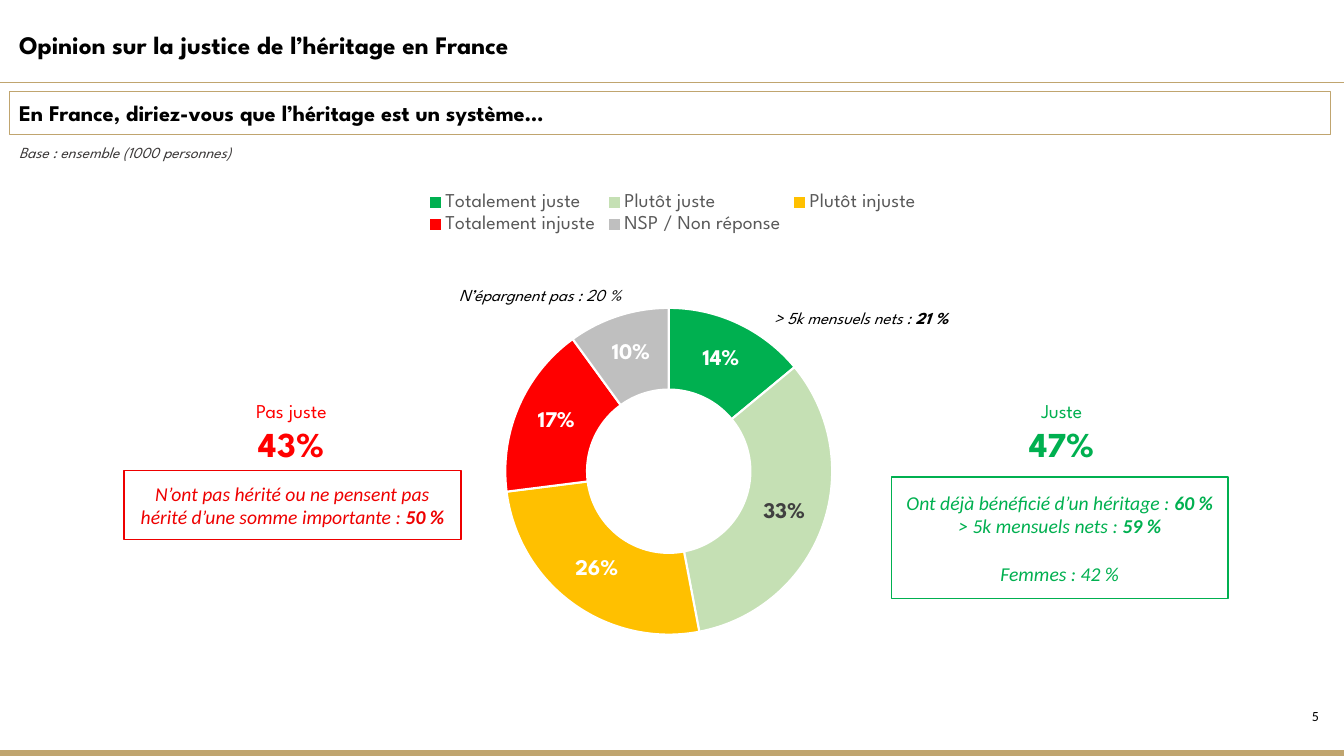
from lxml.etree import SubElement
from pptx import Presentation
from pptx.chart.data import CategoryChartData
from pptx.dml.color import RGBColor
from pptx.enum.chart import XL_CHART_TYPE, XL_LEGEND_POSITION
from pptx.enum.shapes import MSO_CONNECTOR, MSO_SHAPE
from pptx.enum.text import MSO_ANCHOR, PP_ALIGN
from pptx.oxml.ns import qn
from pptx.util import Inches, Pt

WIDTH, HEIGHT = Inches(13.33), Inches(7.5)
SPARTAN, CALIBRI = "League Spartan", "Calibri"
GOLD, GREEN, RED, BLACK = "C0A56F", "00B050", "FF0000", "000000"
WHITE, DARK = "FFFFFF", "404040"
LEFT, CENTER, RIGHT = PP_ALIGN.LEFT, PP_ALIGN.CENTER, PP_ALIGN.RIGHT
TOP, MIDDLE = MSO_ANCHOR.TOP, MSO_ANCHOR.MIDDLE
SLICES = [
    ("Totalement juste", 0.14, GREEN, WHITE),
    ("Plutôt juste", 0.33, "C5E0B4", DARK),
    ("Plutôt injuste", 0.26, "FFC000", WHITE),
    ("Totalement injuste", 0.17, RED, WHITE),
    ("NSP / Non réponse", 0.10, "BFBFBF", WHITE),
]


def rgb(code):
    return RGBColor.from_string(code)


def place(x, y, w, h):
    """Turn percent shares of the slide into lengths."""
    return (round(WIDTH * x / 100), round(HEIGHT * y / 100),
            round(WIDTH * w / 100), round(HEIGHT * h / 100))


def style(font, color, **values):
    for name, value in values.items():
        setattr(font, name, value)
    font.color.rgb = rgb(color)


def look(size, color=BLACK, name=SPARTAN, bold=False, italic=False):
    return dict(size=Pt(size), color=color, name=name, bold=bold, italic=italic)


def write(shape, lines, align=LEFT, anchor=TOP):
    """Fill a shape; each line is a list of (text, look) runs."""
    frame = shape.text_frame
    frame.word_wrap = True
    frame.vertical_anchor = anchor
    for i, runs in enumerate(lines):
        para = frame.paragraphs[0] if i == 0 else frame.add_paragraph()
        para.alignment = align
        for text, form in runs:
            run = para.add_run()
            run.text = text
            style(run.font, **form)
    return frame


def add_text(slide, area, lines, align=LEFT, anchor=TOP):
    return write(slide.shapes.add_textbox(*place(*area)), lines, align, anchor)


def add_box(slide, area, color, width, fill=None):
    box = slide.shapes.add_shape(MSO_SHAPE.RECTANGLE, *place(*area))
    box.shadow.inherit = False
    if fill:
        box.fill.solid()
        box.fill.fore_color.rgb = rgb(fill)
    else:
        box.fill.background()
    box.line.color.rgb = rgb(color)
    box.line.width = Pt(width)
    return box


def add_rule(slide, y):
    x, top, w, _ = place(0, y, 100, 0)
    rule = slide.shapes.add_connector(MSO_CONNECTOR.STRAIGHT, x, top, w, top)
    rule.line.color.rgb = rgb(GOLD)
    rule.line.width = Pt(0.5)
    SubElement(rule._element.spPr, qn("a:effectLst"))


def add_score(slide, x, label, score, color):
    add_text(slide, (x, 52.13, 23.86, 10.13),
             [[(label, look(14, color))], [(score, look(25, color, bold=True))]],
             CENTER)


def set_plot(chart, **shares):
    """Fix the inner plot area as shares of the chart."""
    area = chart._chartSpace.chart.plotArea
    for old in area.findall(qn("c:layout")):
        area.remove(old)
    layout = SubElement(area, qn("c:layout"))
    area.insert(0, layout)
    manual = SubElement(layout, qn("c:manualLayout"))
    modes = dict(layoutTarget="inner", xMode="edge", yMode="edge")
    for tag, value in {**modes, **shares}.items():
        SubElement(manual, qn("c:" + tag)).set("val", str(value))


def add_ring(slide, area):
    data = CategoryChartData(number_format="0%")
    data.categories = [name for name, *_ in SLICES]
    data.add_series("Series 1", [value for _, value, *_ in SLICES])
    chart = slide.shapes.add_chart(
        XL_CHART_TYPE.DOUGHNUT, *place(*area), data).chart
    style(chart.font, BLACK, size=Pt(10), name=CALIBRI)
    chart.has_title = False
    chart.has_legend = True
    chart.legend.position = XL_LEGEND_POSITION.TOP
    chart.legend.include_in_layout = False
    style(chart.legend.font, "595959", size=Pt(14), name=SPARTAN)
    plot = chart.plots[0]
    plot.vary_by_categories = True
    plot._element.find(qn("c:holeSize")).set("val", "61")
    plot.has_data_labels = True
    labels = plot.data_labels
    labels.show_value, labels.show_percentage = True, False
    labels.number_format, labels.number_format_is_linked = "0%", False
    for i, (_, _, color, ink) in enumerate(SLICES):
        point = plot.series[0].points[i]
        point.format.fill.solid()
        point.format.fill.fore_color.rgb = rgb(color)
        point.format.line.color.rgb = rgb(WHITE)
        point.format.line.width = Pt(1.5)
        style(point.data_label.font, **look(16, ink, bold=True))
    set_plot(chart, x=0.28, y=0.19, w=0.43, h=0.79)


def main():
    deck = Presentation()
    deck.slide_width, deck.slide_height = WIDTH, HEIGHT
    slide = deck.slides.add_slide(deck.slide_layouts[6])

    add_text(slide, (91.82, 92.93, 7.05, 3.6), [[("5", look(10, name=CALIBRI))]], RIGHT)
    add_rule(slide, 10.93)
    add_box(slide, (0, 99.33, 100, 0.67), GOLD, 1, GOLD)
    write(add_box(slide, (0.68, 12.13, 98.35, 5.6), GOLD, 0.75),
          [[("En France, diriez-vous que l’héritage est un système…",
             look(16, bold=True))]], anchor=MIDDLE)
    add_text(slide, (0.68, 18.27, 98.35, 3.6),
             [[("Base : ensemble (1000 personnes)", look(11, "3B3838", italic=True))]])
    add_text(slide, (0.68, 3.2, 83.72, 5.33),
             [[("Opinion sur la justice de l’héritage en France", look(18, bold=True))]])

    add_ring(slide, (21.76, 24.13, 56.56, 65.33))
    add_score(slide, 67.07, "Juste", "47%", GREEN)
    add_score(slide, 9.75, "Pas juste", "43%", RED)

    fair = look(14, GREEN, CALIBRI, italic=True)
    strong = {**fair, "bold": True}
    frame = write(add_box(slide, (66.32, 63.07, 25.06, 16.13), GREEN, 1), [
        [("Ont déjà bénéficié d’un héritage : ", fair), ("60 %", strong)],
        [("> 5k mensuels nets : ", fair), ("59 %", strong)],
        [("Femmes : 42 %", fair)],
    ], CENTER, MIDDLE)
    frame.paragraphs[2].space_before = Pt(17)
    unfair = look(14, "EE0000", CALIBRI, italic=True)
    write(add_box(slide, (9.23, 62.27, 25.06, 9.07), "EE0000", 1), [
        [("N’ont pas hérité ou ne pensent pas hérité d’une somme importante : ", unfair),
         ("50 %", {**unfair, "bold": True})],
    ], CENTER, MIDDLE)

    note = look(12, italic=True)
    add_text(slide, (56.86, 40, 18.98, 4),
             [[("> 5k mensuels nets : ", note), ("21 %", {**note, "bold": True})]])
    add_text(slide, (31.88, 33.87, 16.65, 10.13),
             [[("N’épargnent pas : 20 %", note)]], CENTER, MIDDLE)
    deck.save("out.pptx")


if __name__ == "__main__":
    main()
